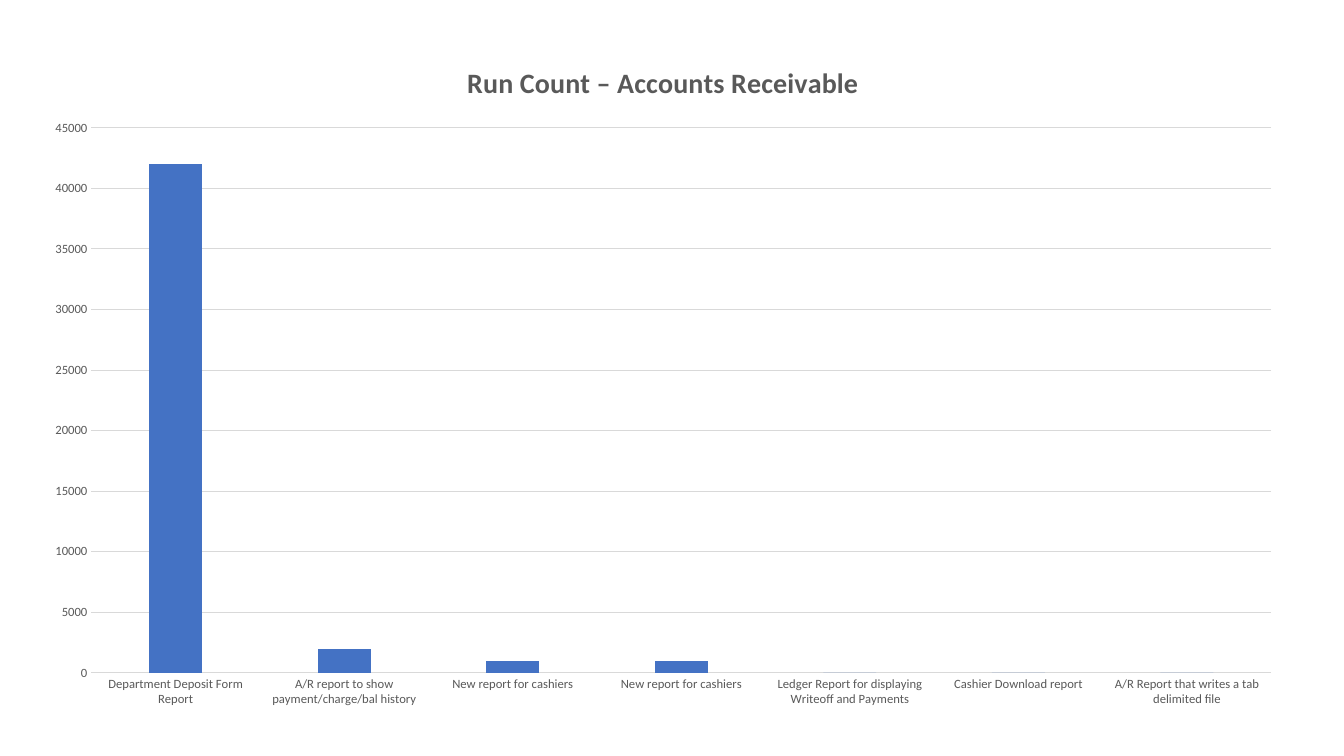
from pptx import Presentation
from pptx.chart.data import CategoryChartData
from pptx.dml.color import RGBColor
from pptx.enum.chart import XL_CHART_TYPE as ChartType, XL_TICK_MARK as TickMark
from pptx.oxml import parse_xml
from pptx.oxml.ns import nsdecls
from pptx.util import Inches, Pt

BLACK = RGBColor(0x00, 0x00, 0x00)
BLUE = RGBColor(0x44, 0x72, 0xC4)
GRAY = RGBColor(0x59, 0x59, 0x59)
LIGHT_GRAY = RGBColor(0xD9, 0xD9, 0xD9)
FONT = "Calibri"

RUN_COUNTS = [
    ("Department Deposit Form Report", 42000),
    ("A/R report to show payment/charge/bal history", 2000),
    ("New report for cashiers", 1000),
    ("New report for cashiers", 1000),
    ("Ledger Report for displaying Writeoff and Payments", 0),
    ("Cashier Download report", 0),
    ("A/R Report that writes a tab delimited file", 0),
]


def style_font(font, size, color, bold=False):
    """Apply the slide's typeface with a size, colour and weight."""
    font.name = FONT
    font.size = Pt(size)
    font.bold = bold
    font.color.rgb = color


def style_line(line):
    """Draw a thin light gray line."""
    line.color.rgb = LIGHT_GRAY
    line.width = Pt(0.75)


def manual_layout(target="", **fractions):
    """Return a chart layout element placed by fractions of the chart."""
    inner = f'<c:layoutTarget val="{target}"/>' if target else ""
    modes = "".join(f'<c:{key}Mode val="edge"/>' for key in "xy")
    values = "".join(f'<c:{key} val="{value}"/>' for key, value in fractions.items())
    return parse_xml(
        f'<c:layout {nsdecls("c")}><c:manualLayout>{inner}{modes}{values}'
        "</c:manualLayout></c:layout>"
    )


def place_part(parent, layout, index):
    """Replace the layout of a chart part."""
    for old in parent.xpath("c:layout"):
        parent.remove(old)
    parent.insert(index, layout)


def add_title(chart, text):
    """Write the chart title."""
    chart.has_title = True
    para = chart.chart_title.text_frame.paragraphs[0]
    span = para.add_run()
    span.text = text
    style_font(span.font, 20, GRAY, bold=True)
    chart.chart_title.include_in_layout = False


def style_axes(chart):
    """Format both axes and the gridlines."""
    for axis in (chart.category_axis, chart.value_axis):
        axis.major_tick_mark = axis.minor_tick_mark = TickMark.NONE
        style_font(axis.tick_labels.font, 9, GRAY)
    style_line(chart.category_axis.format.line)
    values = chart.value_axis
    values.minimum_scale, values.maximum_scale, values.major_unit = 0, 45000, 5000
    values.format.line.fill.background()
    values.has_major_gridlines = True
    style_line(values.major_gridlines.format.line)


def add_run_count_chart(page, left, top, width, height):
    """Add the column chart of report run counts in the given box."""
    data = CategoryChartData(number_format="General")
    data.categories = [report for report, count in RUN_COUNTS]
    data.add_series("Series 1", [count for report, count in RUN_COUNTS])
    chart = page.shapes.add_chart(
        ChartType.COLUMN_CLUSTERED, left, top, width, height, data
    ).chart
    chart.has_legend = False
    style_font(chart.font, 10, BLACK)
    add_title(chart, "Run Count – Accounts Receivable")
    style_axes(chart)
    plot = chart.plots[0]
    plot.vary_by_categories = False
    plot.gap_width, plot.overlap = 219, -27
    fill = plot.series[0].format.fill
    fill.solid()
    fill.fore_color.rgb = BLUE
    title = chart.element.xpath("c:chart/c:title")[0]
    area = chart.element.xpath("c:chart/c:plotArea")[0]
    place_part(title, manual_layout(x=0.3415, y=0.022), 1)
    place_part(area, manual_layout("inner", x=0.049, y=0.125, w=0.931, h=0.806), 0)


def main():
    """Build the deck and save it."""
    deck = Presentation()
    deck.slide_width, deck.slide_height = Inches(13.33), Inches(7.5)
    page = deck.slides.add_slide(deck.slide_layouts[6])
    add_run_count_chart(page, Inches(0.29), Inches(0.43), Inches(12.57), Inches(6.71))
    deck.save("out.pptx")


if __name__ == "__main__":
    main()
